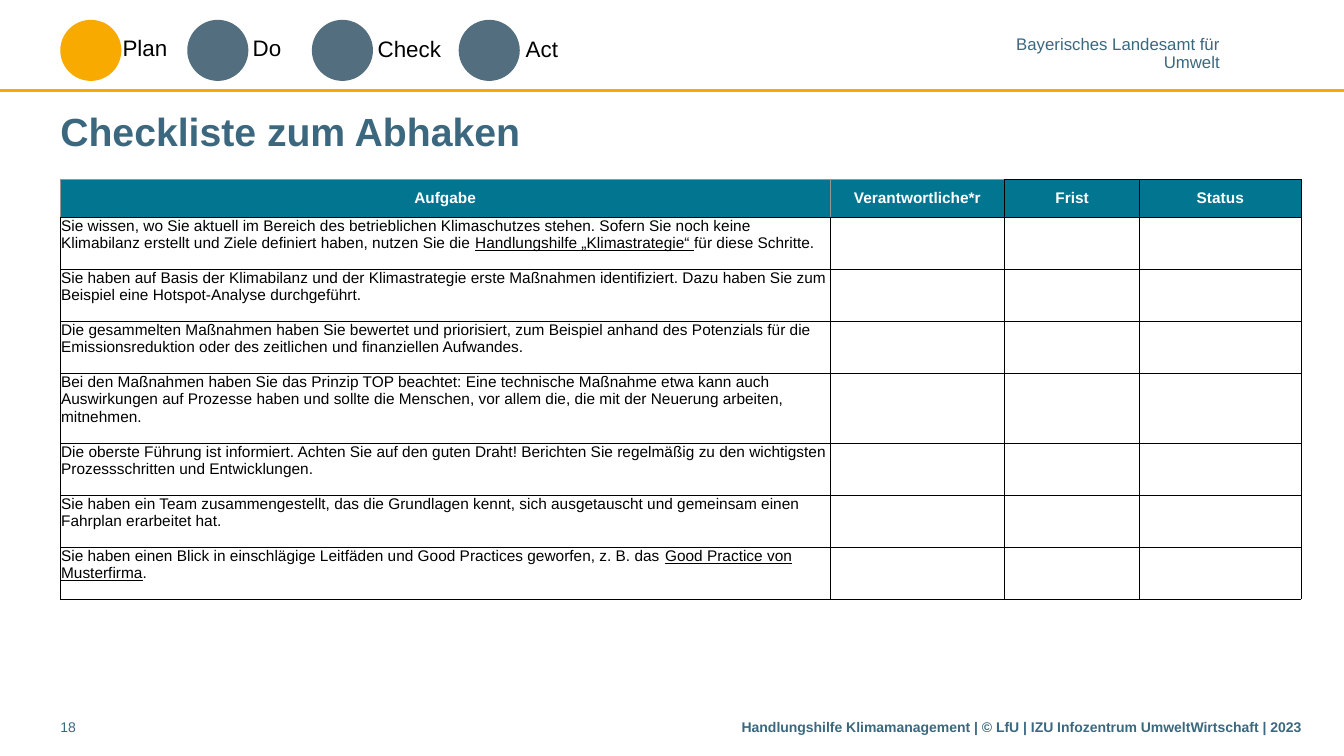
"""Build the checklist slide of the climate management guide."""
import dataclasses

import pptx
import pptx.dml.color
import pptx.enum.shapes
import pptx.enum.text
import pptx.oxml
import pptx.oxml.ns
import pptx.util

Cm = pptx.util.Cm
Pt = pptx.util.Pt
ALIGN = pptx.enum.text.PP_ALIGN
ANCHOR = pptx.enum.text.MSO_ANCHOR


@dataclasses.dataclass(frozen=True)
class Theme:
    font: str = "Arial"
    black: str = "000000"
    white: str = "FFFFFF"
    slate: str = "3B687F"
    step: str = "526E7F"
    accent: str = "F9AA00"
    header: str = "027591"
    grey: str = "969696"
    title_size: int = 28
    step_size: int = 16
    agency_size: int = 12
    table_size: int = 11
    footer_size: int = 10


STEPS = [
    ("Plan", 1.52, 2.84, 0.74),
    ("Do", 4.72, 6.12, 0.74),
    ("Check", 7.86, 9.27, 0.76),
    ("Act", 11.56, 13.0, 0.76),
]
HEADINGS = ["Aufgabe", "Verantwortliche*r", "Frist", "Status"]
COLUMN_WIDTHS = [19.4, 4.4, 3.4, 4.07]
ROW_HEIGHTS = [0.95, 1.31, 1.31, 1.31, 1.76, 1.31, 1.31, 1.31]
GREY_SIDES = {(0, 0): "LRT", (0, 1): "LT"}
TASKS = [
    ["Sie wissen, wo Sie aktuell im Bereich des betrieblichen Klimaschutzes stehen. "
     "Sofern Sie noch keine Klimabilanz erstellt und Ziele definiert haben, nutzen Sie die ",
     "Handlungshilfe „Klimastrategie“ ", "für diese Schritte."],
    ["Sie haben auf Basis der Klimabilanz und der Klimastrategie erste Maßnahmen identifiziert. "
     "Dazu haben Sie zum Beispiel eine Hotspot-Analyse durchgeführt."],
    ["Die gesammelten Maßnahmen haben Sie bewertet und priorisiert, zum Beispiel anhand des "
     "Potenzials für die Emissionsreduktion oder des zeitlichen und finanziellen Aufwandes."],
    ["Bei den Maßnahmen haben Sie das Prinzip TOP beachtet: Eine technische Maßnahme etwa kann "
     "auch Auswirkungen auf Prozesse haben und sollte die Menschen, vor allem die, die mit der "
     "Neuerung arbeiten, mitnehmen."],
    ["Die oberste Führung ist informiert. Achten Sie auf den guten Draht! Berichten Sie "
     "regelmäßig zu den wichtigsten Prozessschritten und Entwicklungen."],
    ["Sie haben ein Team zusammengestellt, das die Grundlagen kennt, sich ausgetauscht und "
     "gemeinsam einen Fahrplan erarbeitet hat."],
    ["Sie haben einen Blick in einschlägige Leitfäden und Good Practices geworfen, z. B. das ",
     "Good Practice von Musterfirma", "."],
]


class SlideBuilder:
    """Draw styled elements on one slide."""

    def __init__(self, slide, theme):
        self.slide = slide
        self.theme = theme

    def color(self, value):
        return pptx.dml.color.RGBColor.from_string(value)

    def run(self, paragraph, text, size, color, bold=False, underline=False):
        font_run = paragraph.add_run()
        font_run.text = text
        font = font_run.font
        font.name = self.theme.font
        font.size = Pt(size)
        font.bold = bold
        font.underline = underline
        font.color.rgb = self.color(color)

    def margins(self, frame, sides, ends):
        frame.margin_left = frame.margin_right = Cm(sides)
        frame.margin_top = frame.margin_bottom = Cm(ends)

    def title(self, text, box):
        shape = self.slide.shapes.title
        shape.left, shape.top, shape.width, shape.height = map(Cm, box)
        frame = shape.text_frame
        frame.auto_size = pptx.enum.text.MSO_AUTO_SIZE.NONE
        frame.vertical_anchor = ANCHOR.MIDDLE
        self.margins(frame, 0, 0.13)
        frame.paragraphs[0].alignment = ALIGN.LEFT
        self.run(frame.paragraphs[0], text, self.theme.title_size, self.theme.slate, bold=True)

    def text(self, lines, box, size, color, align=ALIGN.LEFT, bold=False,
             sides=0, ends=0.13, spacing=None):
        frame = self.slide.shapes.add_textbox(*map(Cm, box)).text_frame
        frame.word_wrap = True
        self.margins(frame, sides, ends)
        for index, line in enumerate(lines):
            paragraph = frame.add_paragraph() if index else frame.paragraphs[0]
            paragraph.alignment = align
            paragraph.line_spacing = spacing
            self.run(paragraph, line, size, color, bold)

    def circle(self, left, top, diameter, color):
        shape = self.slide.shapes.add_shape(
            pptx.enum.shapes.MSO_SHAPE.OVAL, Cm(left), Cm(top), Cm(diameter), Cm(diameter))
        shape.shadow.inherit = False
        shape.fill.solid()
        shape.fill.fore_color.rgb = self.color(color)
        shape.line.fill.background()

    def rule(self, top, width):
        line = self.slide.shapes.add_connector(
            pptx.enum.shapes.MSO_CONNECTOR.STRAIGHT, 0, Cm(top), Cm(width), Cm(top))
        line.line.color.rgb = self.color(self.theme.accent)
        line.line.width = Pt(2)
        properties = line._element.find(pptx.oxml.ns.qn("p:spPr"))
        properties.append(pptx.oxml.parse_xml(f'<a:effectLst {pptx.oxml.ns.nsdecls("a")}/>'))

    def borders(self, cell, grey_sides):
        properties = cell._tc.get_or_add_tcPr()
        for side in "LRTB":
            color = self.theme.grey if side in grey_sides else self.theme.black
            properties.append(pptx.oxml.parse_xml(
                f'<a:ln{side} {pptx.oxml.ns.nsdecls("a")} w="{Pt(0.5)}">'
                f'<a:solidFill><a:srgbClr val="{color}"/></a:solidFill></a:ln{side}>'))

    def checklist(self, left, top):
        theme = self.theme
        table = self.slide.shapes.add_table(
            len(ROW_HEIGHTS), len(COLUMN_WIDTHS), Cm(left), Cm(top),
            Cm(sum(COLUMN_WIDTHS)), Cm(sum(ROW_HEIGHTS))).table
        table.first_row = table.horz_banding = False
        for column, width in zip(table.columns, COLUMN_WIDTHS):
            column.width = Cm(width)
        rows = [[[heading] for heading in HEADINGS]]
        rows += [[task, [], [], []] for task in TASKS]
        for row_index, (row, height) in enumerate(zip(rows, ROW_HEIGHTS)):
            table.rows[row_index].height = Cm(height)
            is_header = row_index == 0
            for column_index, parts in enumerate(row):
                cell = table.cell(row_index, column_index)
                self.margins(cell, 0.02, 0.02)
                self.borders(cell, GREY_SIDES.get((row_index, column_index), ""))
                cell.vertical_anchor = ANCHOR.MIDDLE if is_header else ANCHOR.TOP
                if is_header:
                    cell.fill.solid()
                    cell.fill.fore_color.rgb = self.color(theme.header)
                else:
                    cell.fill.background()
                paragraph = cell.text_frame.paragraphs[0]
                paragraph.alignment = ALIGN.CENTER if is_header else ALIGN.LEFT
                for part_index, part in enumerate(parts):
                    self.run(paragraph, part, theme.table_size,
                             theme.white if is_header else theme.black,
                             bold=is_header, underline=part_index % 2 == 1)


def main():
    presentation = pptx.Presentation()
    presentation.slide_width = Cm(33.87)
    presentation.slide_height = Cm(19.05)
    theme = Theme()
    builder = SlideBuilder(presentation.slides.add_slide(presentation.slide_layouts[5]), theme)
    builder.rule(2.29, 33.87)
    builder.text(["Bayerisches Landesamt für", "Umwelt"], (25.58, 0.94, 5.16, 0.86),
                 theme.agency_size, theme.slate, ALIGN.RIGHT, ends=0, spacing=0.85)
    for index, (label, circle_left, label_left, label_top) in enumerate(STEPS):
        builder.circle(circle_left, 0.5, 1.54, theme.step if index else theme.accent)
        builder.text([label], (label_left, label_top, 3.45, 0.94),
                     theme.step_size, theme.black, sides=0.25)
    builder.title("Checkliste zum Abhaken", (1.52, 2.59, 31.27, 1.4))
    builder.checklist(1.52, 4.52)
    builder.text(["Handlungshilfe Klimamanagement | © LfU | IZU Infozentrum UmweltWirtschaft | 2023"],
                 (15.04, 17.98, 17.75, 0.79), theme.footer_size, theme.slate, ALIGN.RIGHT, bold=True)
    builder.text(["18"], (1.52, 17.98, 1.78, 0.79), theme.footer_size, theme.slate)
    presentation.save("out.pptx")


if __name__ == "__main__":
    main()
